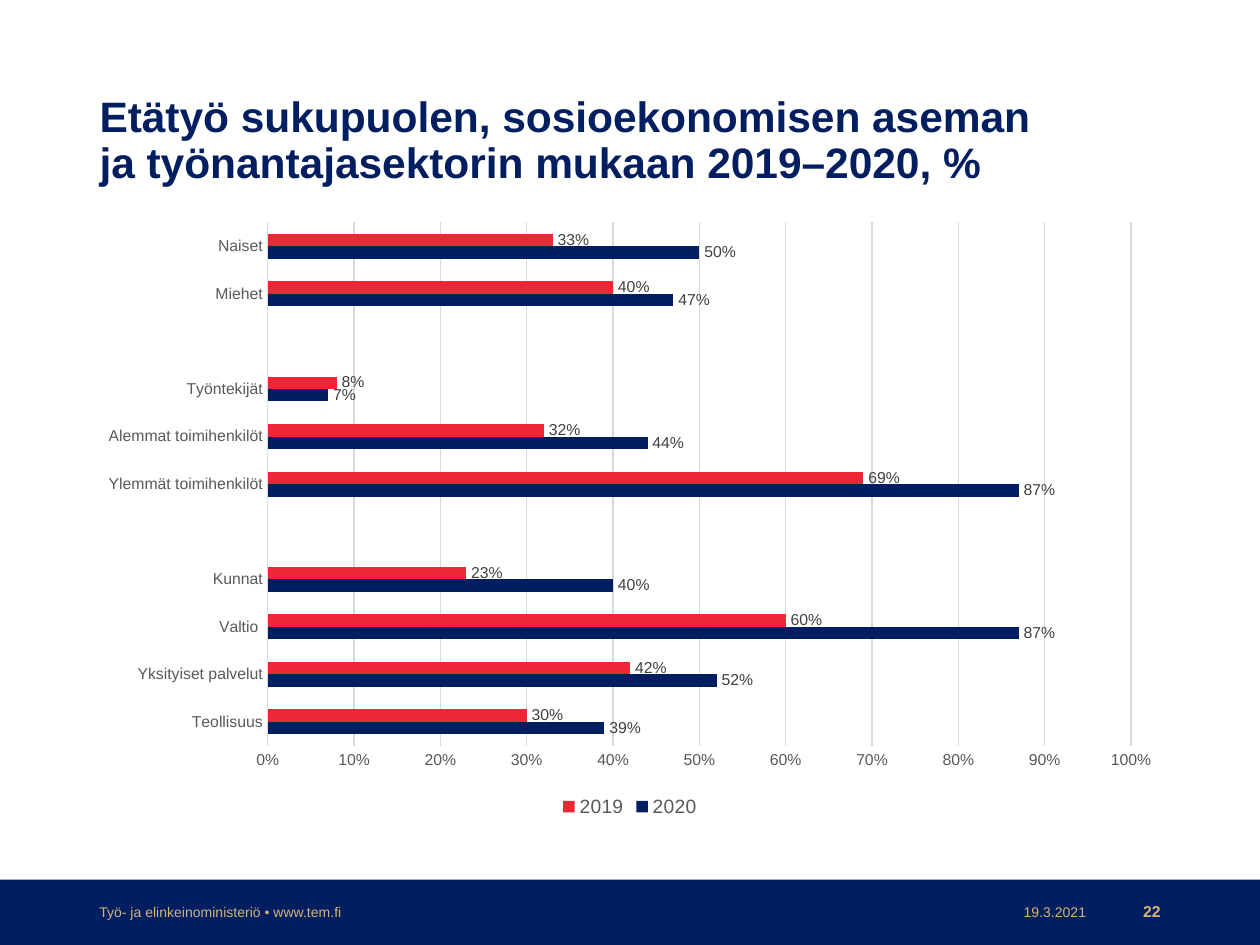
from pptx import Presentation
from pptx.chart.data import CategoryChartData
from pptx.dml.color import RGBColor
from pptx.enum.chart import (
    XL_CHART_TYPE as ChartType,
    XL_LABEL_POSITION as LabelPosition,
    XL_LEGEND_POSITION as LegendPosition,
    XL_TICK_MARK as TickMark,
)
from pptx.enum.shapes import MSO_SHAPE as Shape
from pptx.enum.text import MSO_ANCHOR as Anchor, MSO_AUTO_SIZE as AutoSize, PP_ALIGN as Align
from pptx.util import Pt

COLORS = {
    "navy": "001E60",
    "red": "EE2737",
    "gold": "D5B37A",
    "grid": "D9D9D9",
    "axis": "595959",
    "label": "404040",
}
FONT = "Arial"
SLIDE_W, SLIDE_H = 720, 540
MARGIN = 49.7
BAND_TOP = 502.6

# Categories run from the bottom of the chart to the top; None separates groups.
REMOTE_WORK = [
    ("Teollisuus", 0.39, 0.30),
    ("Yksityiset palvelut", 0.52, 0.42),
    ("Valtio ", 0.87, 0.60),
    ("Kunnat", 0.40, 0.23),
    ("", None, None),
    ("Ylemmät toimihenkilöt", 0.87, 0.69),
    ("Alemmat toimihenkilöt", 0.44, 0.32),
    ("Työntekijät", 0.07, 0.08),
    ("", None, None),
    ("Miehet", 0.47, 0.40),
    ("Naiset", 0.50, 0.33),
]
YEARS = {"2020": "navy", "2019": "red"}


def rgb(name):
    return RGBColor.from_string(COLORS[name])


def style_font(font, size, color, bold=False):
    font.name, font.size, font.bold = FONT, Pt(size), bold
    font.color.rgb = rgb(color)


def add_title(slide, wording):
    title = slide.shapes.title
    title.left, title.top, title.width, title.height = Pt(MARGIN), Pt(41.8), Pt(567.4), Pt(78.5)
    frame = title.text_frame
    frame.text = wording
    frame.auto_size = AutoSize.NONE
    frame.vertical_anchor = Anchor.MIDDLE
    heading = frame.paragraphs[0]
    heading.alignment = Align.LEFT
    heading.line_spacing = 0.9
    style_font(heading.font, 24.3, "navy", bold=True)


def add_footer_band(slide):
    band = slide.shapes.add_shape(
        Shape.RECTANGLE, 0, Pt(BAND_TOP), Pt(SLIDE_W), Pt(SLIDE_H - BAND_TOP)
    )
    band.shadow.inherit = False
    band.fill.solid()
    band.fill.fore_color.rgb = rgb("navy")
    band.line.fill.background()


def add_footer_text(slide, wording, left, width, size=8, align=Align.RIGHT, bold=False):
    box = slide.shapes.add_textbox(Pt(left), Pt(512.6), Pt(width), Pt(16.6))
    frame = box.text_frame
    frame.word_wrap = True
    frame.vertical_anchor = Anchor.MIDDLE
    frame.text = wording
    line = frame.paragraphs[0]
    line.alignment = align
    style_font(line.font, size, "gold", bold)


def style_axis(axis):
    axis.major_tick_mark = axis.minor_tick_mark = TickMark.NONE
    style_font(axis.tick_labels.font, 9, "axis")


def style_line(line):
    line.color.rgb = rgb("grid")
    line.width = Pt(0.75)


def style_series(series, color):
    series.format.fill.solid()
    series.format.fill.fore_color.rgb = rgb(color)
    series.invert_if_negative = False
    labels = series.data_labels
    labels.show_value = True
    labels.position = LabelPosition.OUTSIDE_END
    labels.number_format, labels.number_format_is_linked = "0%", False
    style_font(labels.font, 9, "label")


def add_remote_work_chart(slide):
    categories, *yearly_shares = zip(*REMOTE_WORK)
    chart_data = CategoryChartData(number_format="0%")
    chart_data.categories = categories
    for year, shares in zip(YEARS, yearly_shares):
        chart_data.add_series(year, shares)
    chart = slide.shapes.add_chart(
        ChartType.BAR_CLUSTERED, Pt(MARGIN), Pt(120.2), Pt(620.6), Pt(350), chart_data
    ).chart
    chart.has_title = False
    chart.font.name, chart.font.size = FONT, Pt(10)

    style_axis(chart.category_axis)
    style_line(chart.category_axis.format.line)

    share_axis = chart.value_axis
    style_axis(share_axis)
    share_axis.minimum_scale, share_axis.maximum_scale, share_axis.major_unit = 0, 1, 0.1
    share_axis.tick_labels.number_format = "0%"
    share_axis.tick_labels.number_format_is_linked = False
    share_axis.format.line.fill.background()
    style_line(share_axis.major_gridlines.format.line)

    chart.has_legend = True
    chart.legend.position = LegendPosition.BOTTOM
    chart.legend.include_in_layout = False
    style_font(chart.legend.font, 11, "axis")

    plot = chart.plots[0]
    plot.gap_width = 182
    plot.overlap = 0
    plot.vary_by_categories = False
    for series in plot.series:
        style_series(series, YEARS[series.name])


def main():
    deck = Presentation()
    deck.slide_width, deck.slide_height = Pt(SLIDE_W), Pt(SLIDE_H)
    slide = deck.slides.add_slide(deck.slide_layouts[5])

    add_footer_band(slide)
    add_title(slide, "Etätyö sukupuolen, sosioekonomisen aseman ja työnantajasektorin mukaan 2019–2020, %")
    add_footer_text(slide, "22", 627.8, 42.5, size=9, bold=True)
    add_footer_text(slide, "19.3.2021", 572.4, 55.4)
    add_footer_text(slide, "Työ- ja elinkeinoministeriö • www.tem.fi", MARGIN, 242.6, align=Align.LEFT)
    add_remote_work_chart(slide)

    deck.save("out.pptx")


if __name__ == "__main__":
    main()
